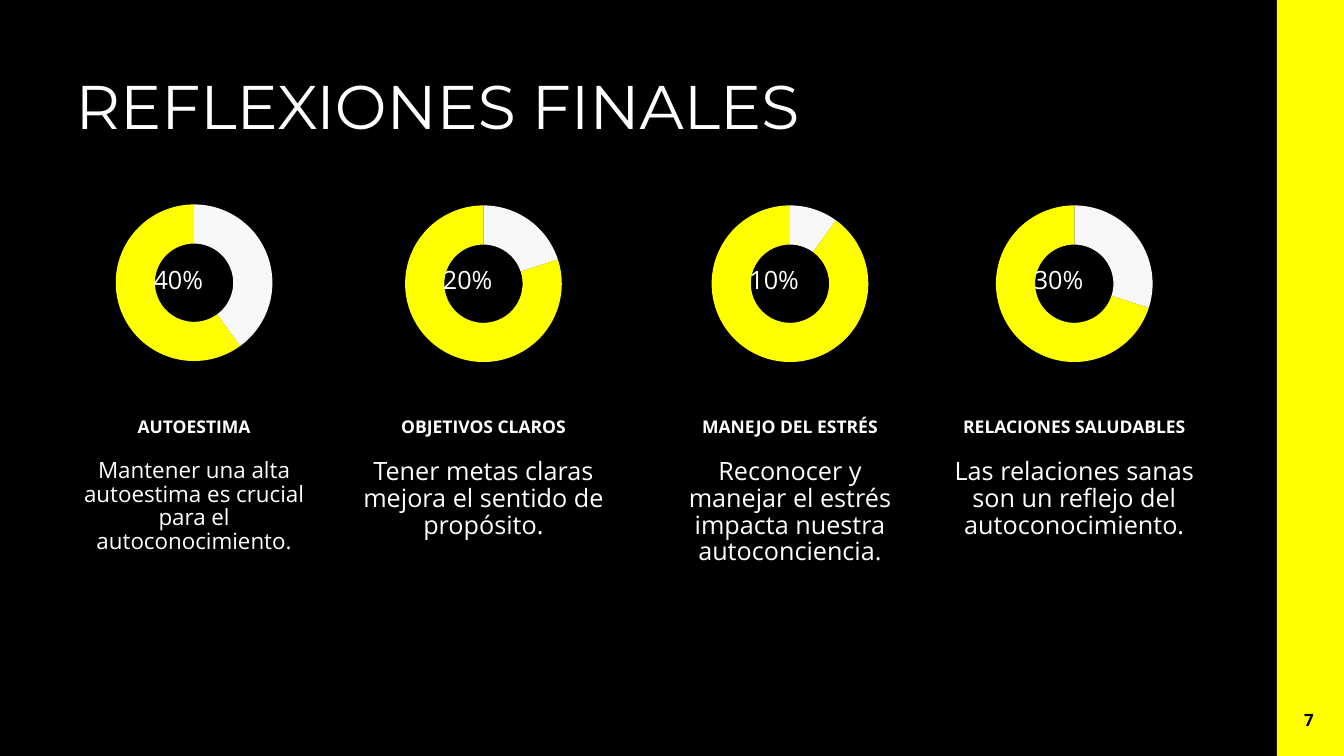
import pptx
import pptx.chart.data
import pptx.dml.color
import pptx.enum.chart
import pptx.enum.shapes
import pptx.enum.text
import pptx.util

# Content: left edge, chart top, label top, share, label, body, body size
TITLE = "REFLEXIONES FINALES"
PAGE = "7"
REFLECTIONS = [
    (0.62, 1.89, 3.86, 40, "AUTOESTIMA",
     "Mantener una alta autoestima es crucial para el autoconocimiento.", 16),
    (3.49, 1.9, 3.86, 20, "OBJETIVOS CLAROS",
     "Tener metas claras mejora el sentido de propósito.", 18),
    (6.53, 1.9, 3.85, 10, "MANEJO DEL ESTRÉS",
     "Reconocer y manejar el estrés impacta nuestra autoconciencia.", 18),
    (9.35, 1.9, 3.86, 30, "RELACIONES SALUDABLES",
     "Las relaciones sanas son un reflejo del autoconocimiento.", 18),
]
COLORS = {"black": "000000", "white": "FFFFFF", "yellow": "FFFF00",
          "share": "F8F8F8", "outline": "F9F9F9"}
WIDTH, HEIGHT = 13.33, 7.5
BAND = WIDTH * 0.05
COLUMN = 2.61
RING_WIDTH, RING_HEIGHT = 2.22, 1.83
ALIGN = pptx.enum.text.PP_ALIGN
ANCHOR = pptx.enum.text.MSO_ANCHOR


def color(name):
    return pptx.dml.color.RGBColor.from_string(COLORS[name])


def inches(*lengths):
    return [pptx.util.Inches(length) for length in lengths]


def write(holder, text, size=18, font="Open Sans", fill="white", bold=False,
          align=ALIGN.LEFT, anchor=ANCHOR.TOP, spacing=1.0):
    frame = holder.text_frame
    frame.word_wrap = True
    frame.auto_size = pptx.enum.text.MSO_AUTO_SIZE.NONE
    frame.vertical_anchor = anchor
    frame.text = text
    paragraph = frame.paragraphs[0]
    paragraph.alignment = align
    paragraph.line_spacing = spacing
    paragraph.space_before = pptx.util.Pt(0)
    style = paragraph.runs[0].font
    style.name, style.size, style.bold = font, pptx.util.Pt(size), bold
    style.color.rgb = color(fill)


def add_text(slide, box, text, **style):
    write(slide.shapes.add_textbox(*inches(*box)), text, **style)


def add_ring(slide, left, top, share):
    data = pptx.chart.data.CategoryChartData()
    data.categories = ["1", "2"]
    data.add_series("Series 1", (share, 100 - share))
    ring = slide.shapes.add_chart(
        pptx.enum.chart.XL_CHART_TYPE.DOUGHNUT,
        *inches(left, top, RING_WIDTH, RING_HEIGHT), data).chart
    ring.has_legend = False
    ring.has_title = False
    ring.font.name, ring.font.size = "Open Sans", pptx.util.Pt(10)
    ring.font.color.rgb = color("white")
    plot = ring.plots[0]
    plot.vary_by_categories = True
    plot._element.find(pptx.oxml.ns.qn("c:holeSize")).set("val", "90")
    series = plot.series[0]
    series.format.line.color.rgb = color("outline")
    series.format.line.width = pptx.util.Pt(0.75)
    for index, name in enumerate(("share", "yellow")):
        slice_fill = series.points[index].format.fill
        slice_fill.solid()
        slice_fill.fore_color.rgb = color(name)


def main():
    deck = pptx.Presentation()
    deck.slide_width, deck.slide_height = inches(WIDTH, HEIGHT)
    slide = deck.slides.add_slide(deck.slide_layouts[5])
    slide.background.fill.solid()
    slide.background.fill.fore_color.rgb = color("black")

    # Side band and page number
    band = slide.shapes.add_shape(pptx.enum.shapes.MSO_SHAPE.RECTANGLE,
                                  *inches(WIDTH - BAND, 0, BAND, HEIGHT))
    band.shadow.inherit = False
    band.fill.solid()
    band.fill.fore_color.rgb = color("yellow")
    band.line.fill.background()
    add_text(slide, (12.65, 6.94, BAND, 0.39), PAGE, size=12.1, fill="black",
             bold=True, align=ALIGN.CENTER, anchor=ANCHOR.MIDDLE)

    # Title
    title = slide.shapes.title
    title.left, title.top, title.width, title.height = inches(0.65, 0.62, 11.33, 1.04)
    write(title, TITLE, size=44, font="Montserrat")

    # One column per reflection
    for left, ring_top, label_top, share, label, body, size in REFLECTIONS:
        ring_left = left + (COLUMN - RING_WIDTH) / 2
        add_ring(slide, ring_left, ring_top, share)
        add_text(slide, (ring_left + 0.61, 2.57, 1, 0.5), f"{share}%")
        add_text(slide, (left, label_top, COLUMN, 0.53), label, size=12.5,
                 bold=True, align=ALIGN.CENTER, anchor=ANCHOR.BOTTOM)
        add_text(slide, (left, 4.51, COLUMN, 1.18), body, size=size,
                 align=ALIGN.CENTER, spacing=0.88)

    deck.save("out.pptx")


if __name__ == "__main__":
    main()
